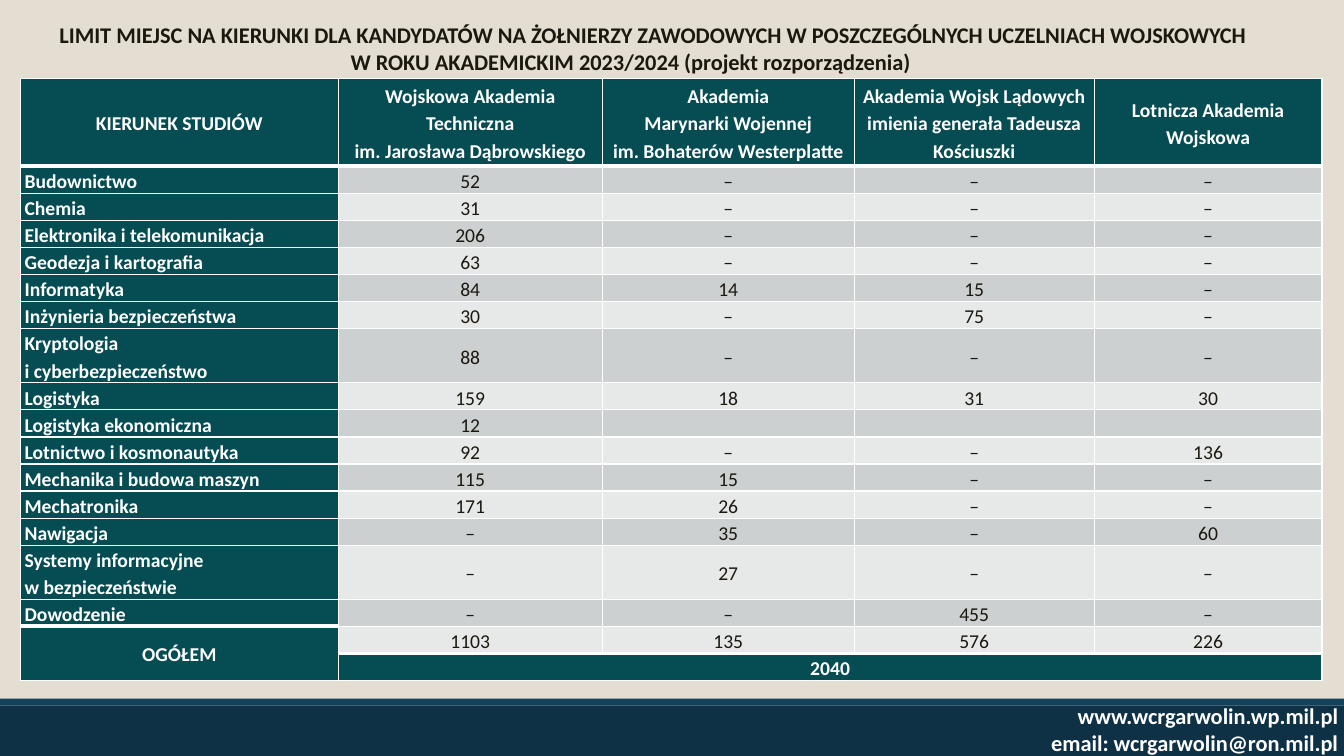
from lxml import etree
from pptx import Presentation
from pptx.dml.color import RGBColor
from pptx.enum import shapes, text
from pptx.oxml import ns
from pptx.util import Pt

# Content
TITLE = ("LIMIT MIEJSC NA KIERUNKI DLA KANDYDATÓW NA ŻOŁNIERZY ZAWODOWYCH "
         "W POSZCZEGÓLNYCH UCZELNIACH WOJSKOWYCH\n"
         "W ROKU AKADEMICKIM 2023/2024 (projekt rozporządzenia)")
CONTACT = "www.wcrgarwolin.wp.mil.pl\nemail: wcrgarwolin@ron.mil.pl"
HEADER = ("KIERUNEK STUDIÓW",
          "Wojskowa Akademia Techniczna\nim. Jarosława Dąbrowskiego",
          "Akademia\nMarynarki Wojennej\nim. Bohaterów Westerplatte",
          "Akademia Wojsk Lądowych\nimienia generała Tadeusza Kościuszki",
          "Lotnicza Akademia Wojskowa")
PLACES = [
    ("Budownictwo", "52", "–", "–", "–"),
    ("Chemia", "31", "–", "–", "–"),
    ("Elektronika i telekomunikacja", "206", "–", "–", "–"),
    ("Geodezja i kartografia", "63", "–", "–", "–"),
    ("Informatyka", "84", "14", "15", "–"),
    ("Inżynieria bezpieczeństwa", "30", "–", "75", "–"),
    ("Kryptologia\ni cyberbezpieczeństwo", "88", "–", "–", "–"),
    ("Logistyka", "159", "18", "31", "30"),
    ("Logistyka ekonomiczna", "12", "", "", ""),
    ("Lotnictwo i kosmonautyka", "92", "–", "–", "136"),
    ("Mechanika i budowa maszyn", "115", "15", "–", "–"),
    ("Mechatronika", "171", "26", "–", "–"),
    ("Nawigacja", "–", "35", "–", "60"),
    ("Systemy informacyjne\nw bezpieczeństwie", "–", "27", "–", "–"),
    ("Dowodzenie", "–", "–", "455", "–"),
]
TOTALS = ("OGÓŁEM", "1103", "135", "576", "226")
GRAND_TOTAL = ("", "2040", "", "", "")

# Look
FONT = "Calibri"
WHITE, INK, TEAL = "FFFFFF", "1B1810", "054C53"
BANDS = ("CCD0D1", "E7E9E9")
WIDTH, HEIGHT = 960, 540
COLUMNS = (227, 188.6, 180, 171.4, 162.8)
TABLE_LEFT, TABLE_TOP = 14.6, 56
HEADER_HEIGHT, LINE_HEIGHT = 62.8, 19.28
LEFT, CENTER, RIGHT = text.PP_ALIGN.LEFT, text.PP_ALIGN.CENTER, text.PP_ALIGN.RIGHT


def colour(value):
    return RGBColor.from_string(value)


def style_text(frame, size, ink, align, bold, spacing=None):
    for para in frame.paragraphs:
        para.alignment = align
        para.line_spacing = spacing
        font = para.font
        font.name, font.size, font.bold = FONT, Pt(size), bold
        font.color.rgb = colour(ink)


def add_text(page, words, left, top, width, height, ink, align):
    box = page.shapes.add_textbox(Pt(left), Pt(top), Pt(width), Pt(height))
    frame = box.text_frame
    frame.word_wrap = True
    frame.margin_left = frame.margin_right = 0
    frame.text = words
    style_text(frame, 16, ink, align, bold=True)
    return frame


def add_bar(page, top, height, fill):
    bar = page.shapes.add_shape(shapes.MSO_SHAPE.RECTANGLE, 0, Pt(top), Pt(WIDTH), Pt(height))
    bar.shadow.inherit = False
    bar.fill.solid()
    bar.fill.fore_color.rgb = colour(fill)
    bar.line.fill.background()


def set_borders(cell, top=1, bottom=1):
    properties = cell._tc.get_or_add_tcPr()
    for side, width in (("L", 1), ("R", 1), ("T", top), ("B", bottom)):
        line = etree.SubElement(properties, ns.qn(f"a:ln{side}"), w=str(Pt(width)))
        fill = etree.SubElement(line, ns.qn("a:solidFill"))
        etree.SubElement(fill, ns.qn("a:srgbClr"), val=WHITE)


def fill_cell(cell, words, fill, align, top=1, bottom=1):
    strong = fill == TEAL
    set_borders(cell, top, bottom)
    cell.fill.solid()
    cell.fill.fore_color.rgb = colour(fill)
    cell.margin_left = cell.margin_right = Pt(3)
    cell.margin_top = cell.margin_bottom = 0
    cell.vertical_anchor = text.MSO_ANCHOR.MIDDLE
    cell.text_frame.text = words
    style_text(cell.text_frame, 14, WHITE if strong else INK, align, strong, spacing=1.15)
    if not words:
        # Keeps an empty cell from stretching its row
        etree.SubElement(cell.text_frame.paragraphs[0]._p, ns.qn("a:endParaRPr"), sz="1400")


def add_places_table(page):
    rows = [HEADER, *PLACES, TOTALS, GRAND_TOTAL]
    last = len(rows) - 1
    heights = [HEADER_HEIGHT] + [LINE_HEIGHT * (row[0].count("\n") + 1) for row in rows[1:]]
    table = page.shapes.add_table(len(rows), len(COLUMNS), Pt(TABLE_LEFT), Pt(TABLE_TOP),
                                  Pt(sum(COLUMNS)), Pt(sum(heights))).table
    table.first_row = table.horz_banding = False
    for column, width in zip(table.columns, COLUMNS):
        column.width = Pt(width)
    for r, (row, height) in enumerate(zip(rows, heights)):
        table.rows[r].height = Pt(height)
        for c, words in enumerate(row):
            strong = r in (0, last) or c == 0
            fill = TEAL if strong else BANDS[(r - 1) % 2]
            align = LEFT if c == 0 and 0 < r < last - 1 else CENTER
            above_total = r == last or (r == last - 1 and c == 0)
            fill_cell(table.cell(r, c), words, fill, align,
                      top=3 if above_total else 1, bottom=3 if r == 0 else 1)
    table.cell(last - 1, 0).merge(table.cell(last, 0))
    table.cell(last, 1).merge(table.cell(last, len(COLUMNS) - 1))


def main():
    deck = Presentation()
    deck.slide_width, deck.slide_height = Pt(WIDTH), Pt(HEIGHT)
    page = deck.slides.add_slide(deck.slide_layouts[6])
    page.background.fill.solid()
    page.background.fill.fore_color.rgb = colour("E3DED1")

    # Footer
    add_bar(page, 504, 36, "0F3146")
    add_bar(page, 499, 5, "14425D")
    add_text(page, CONTACT, 407, 498, 549, 42, WHITE, RIGHT)

    # Title, first line indented
    title = add_text(page, TITLE, 0, 11.5, 901, 46, INK, CENTER)
    title.vertical_anchor = text.MSO_ANCHOR.MIDDLE
    title.paragraphs[0]._p.get_or_add_pPr().set("indent", str(Pt(32)))

    add_places_table(page)
    deck.save("out.pptx")


if __name__ == "__main__":
    main()
